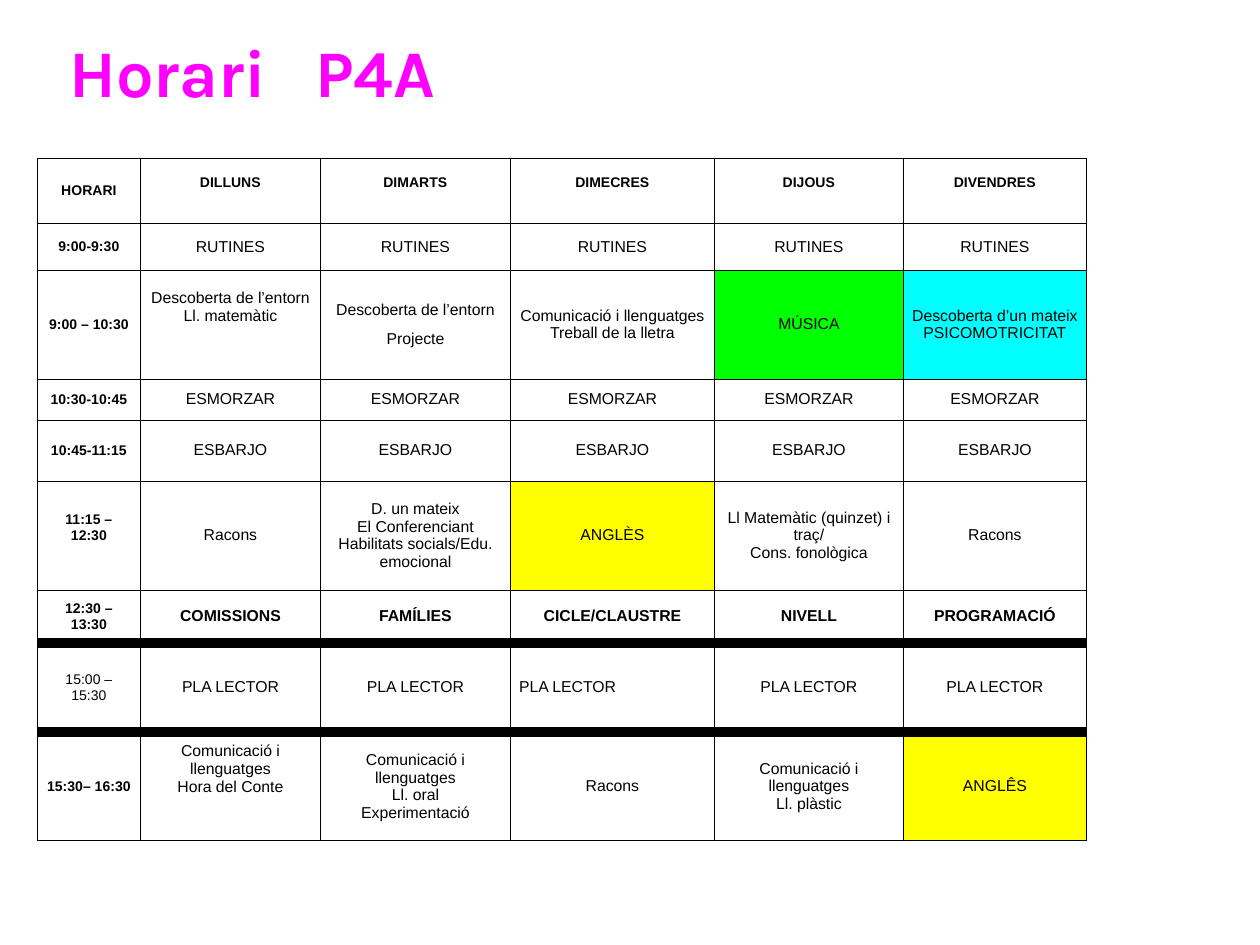
from lxml import etree
from pptx import Presentation
from pptx import util as u
from pptx.dml.color import RGBColor
from pptx.enum import text
from pptx.oxml import ns

Pt = u.Pt
BLACK = RGBColor(0x00, 0x00, 0x00)
WHITE = RGBColor(0xFF, 0xFF, 0xFF)
MAGENTA = RGBColor(0xFF, 0x00, 0xFF)
GREEN = RGBColor(0x00, 0xFF, 0x00)
CYAN = RGBColor(0x00, 0xFF, 0xFF)
YELLOW = RGBColor(0xFF, 0xFF, 0x00)

COL_WIDTHS = [58.86, 102.86, 108.57, 116.57, 108, 104.57]
ROW_HEIGHTS = [37.14, 26.86, 62.29, 23.43, 34.86, 62.29, 30.29, 50.86, 62.29]
TIMETABLE = [
    ["HORARI", "DILLUNS", "DIMARTS", "DIMECRES", "DIJOUS", "DIVENDRES"],
    ["9:00-9:30"] + ["RUTINES"] * 5,
    ["9:00 – 10:30", "Descoberta de l’entorn\nLl. matemàtic",
     "Descoberta de l’entorn\nProjecte",
     "Comunicació i llenguatges\nTreball de la lletra", "MÚSICA",
     "Descoberta d’un mateix\nPSICOMOTRICITAT"],
    ["10:30-10:45"] + ["ESMORZAR"] * 5,
    ["10:45-11:15"] + ["ESBARJO"] * 5,
    ["11:15 – 12:30", "Racons",
     "D. un mateix\nEl Conferenciant\nHabilitats socials/Edu. emocional",
     "ANGLÈS", "Ll Matemàtic (quinzet) i traç/\nCons. fonològica", "Racons"],
    ["12:30 – 13:30", "COMISSIONS", "FAMÍLIES", "CICLE/CLAUSTRE", "NIVELL",
     "PROGRAMACIÓ"],
    ["15:00 – 15:30"] + ["PLA LECTOR"] * 5,
    ["15:30– 16:30", "Comunicació i llenguatges\nHora del Conte",
     "Comunicació i llenguatges\nLl. oral\nExperimentació", "Racons",
     "Comunicació i llenguatges\nLl. plàstic", "ANGLÊS"],
]
HEADER, MEETINGS, READING = 0, 6, 7
THICK_BELOW = {MEETINGS, READING}
FILLS = {(2, 4): GREEN, (2, 5): CYAN, (5, 3): YELLOW, (8, 5): YELLOW}
RAISED = {(HEADER, c): 9 for c in range(1, 6)}
RAISED.update({(2, 1): 20, (5, 0): 9, (8, 1): 20})
LEFT_ALIGNED = {(READING, 3)}
SPACED = {(2, 2)}


def add_title(s):
    """Place the title and set its second word on a tab stop."""
    sp = s.shapes.title
    sp.left, sp.top, sp.width, sp.height = Pt(36), Pt(21.6), Pt(570), Pt(41.8)
    tf = sp.text_frame
    tf.auto_size = text.MSO_AUTO_SIZE.NONE
    tf.vertical_anchor = text.MSO_ANCHOR.BOTTOM
    tf.margin_left = tf.margin_right = Pt(3.6)
    tf.margin_top = tf.margin_bottom = 0
    p = tf.paragraphs[0]
    p.text = "Horari\tP4A"
    p.alignment = text.PP_ALIGN.LEFT
    tabs = etree.SubElement(p._p.get_or_add_pPr(), ns.qn("a:tabLst"))
    etree.SubElement(tabs, ns.qn("a:tab"), pos=str(Pt(140.6)), algn="l")
    style_font(p.font, "Karla", 38, MAGENTA, True)


def style_font(font, name, size, color, bold):
    """Set the typeface, size, colour and weight of a font."""
    font.name, font.size, font.bold = name, Pt(size), bold
    font.color.rgb = color


def add_borders(cell, row):
    """Draw thin cell borders, thick around the reading row."""
    thick = {"lnT": row - 1 in THICK_BELOW, "lnB": row in THICK_BELOW}
    tc_pr = cell._tc.get_or_add_tcPr()
    for side in ("lnL", "lnR", "lnT", "lnB"):
        width = Pt(6 if thick.get(side) else 0.5)
        ln = etree.SubElement(tc_pr, ns.qn("a:" + side), w=str(width))
        fill = etree.SubElement(ln, ns.qn("a:solidFill"))
        etree.SubElement(fill, ns.qn("a:srgbClr"), val=str(BLACK))


def fill_cell(cell, row, col, words):
    """Write and format one timetable cell."""
    key = row, col
    add_borders(cell, row)
    cell.fill.solid()
    cell.fill.fore_color.rgb = FILLS.get(key, WHITE)
    cell.vertical_anchor = text.MSO_ANCHOR.MIDDLE
    cell.margin_left = cell.margin_right = Pt(5)
    cell.margin_top, cell.margin_bottom = 0, Pt(RAISED.get(key, 0))
    cell.text = words
    small = row == HEADER or col == 0
    bold = row == MEETINGS or (small and row != READING)
    align = text.PP_ALIGN.LEFT if key in LEFT_ALIGNED else text.PP_ALIGN.CENTER
    for i, p in enumerate(cell.text_frame.paragraphs):
        p.alignment = align
        if i and key in SPACED:
            p.space_before = Pt(6)
        style_font(p.font, "Arial", 8 if small else 9, BLACK, bold)


def add_timetable(s):
    """Add the weekly timetable."""
    table = s.shapes.add_table(
        len(ROW_HEIGHTS), len(COL_WIDTHS), Pt(21.4), Pt(90.3),
        Pt(sum(COL_WIDTHS)), Pt(sum(ROW_HEIGHTS))).table
    table.first_row = table.horz_banding = False
    for column, width in zip(table.columns, COL_WIDTHS):
        column.width = Pt(width)
    for r, height in enumerate(ROW_HEIGHTS):
        table.rows[r].height = Pt(height)
        for c, words in enumerate(TIMETABLE[r]):
            fill_cell(table.cell(r, c), r, c, words)


def main():
    """Build and save the timetable slide."""
    prs = Presentation()
    prs.slide_width, prs.slide_height = Pt(720), Pt(540)
    s = prs.slides.add_slide(prs.slide_layouts[5])
    add_title(s)
    add_timetable(s)
    prs.save("out.pptx")


if __name__ == "__main__":
    main()
